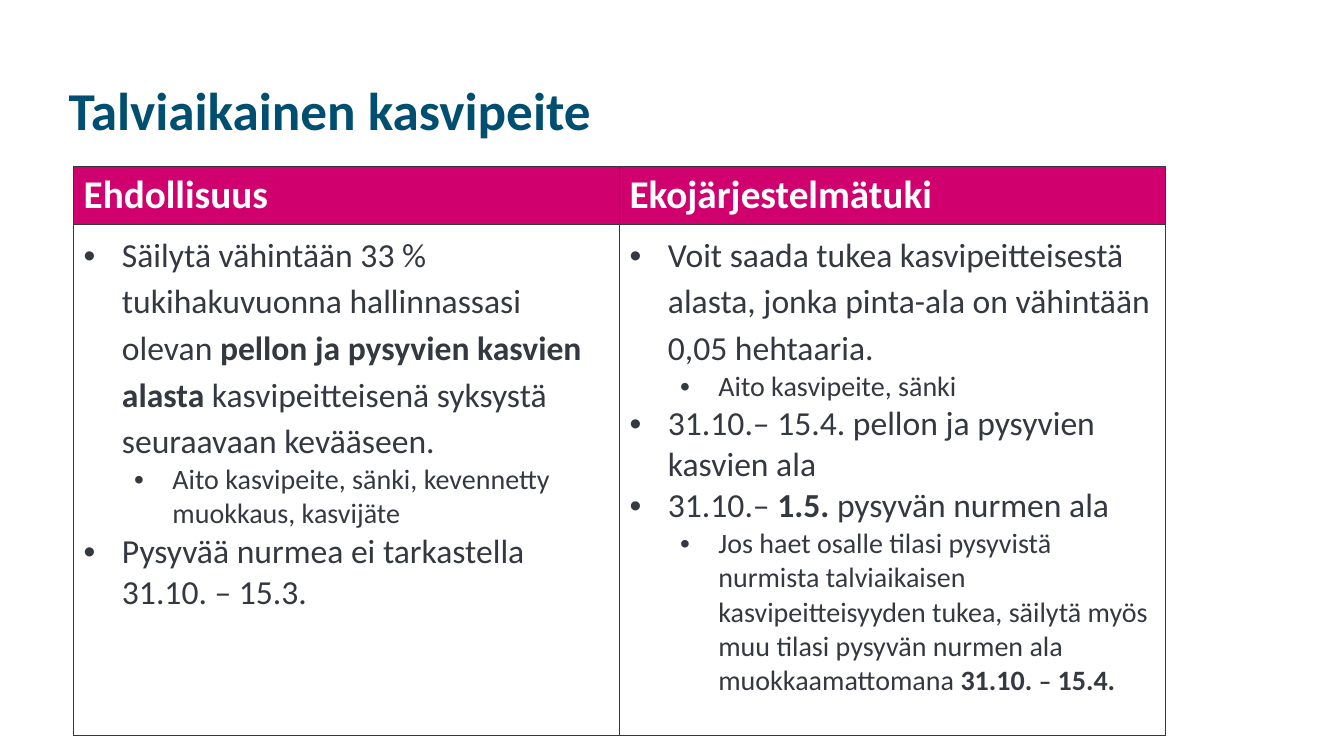
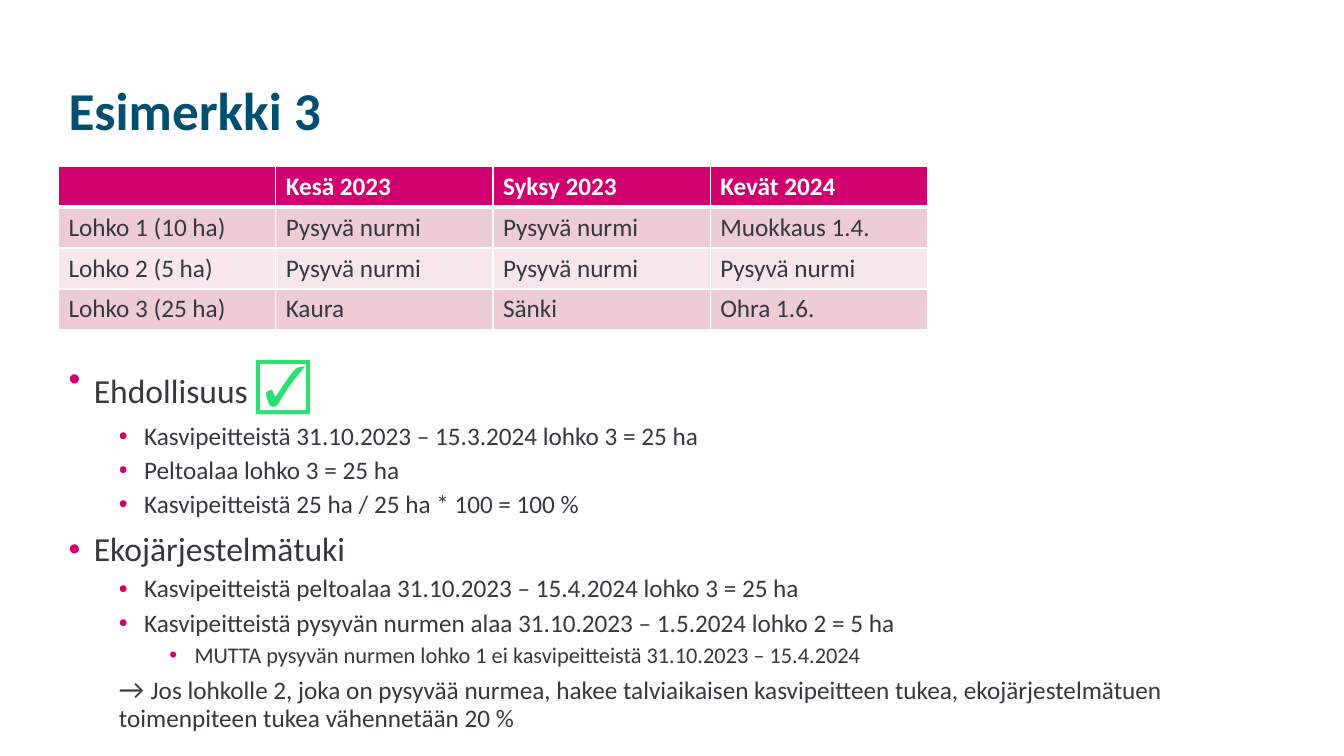
from lxml.etree import SubElement
from pptx import Presentation
from pptx.dml.color import RGBColor
from pptx.enum.text import MSO_ANCHOR, MSO_AUTO_SIZE, PP_ALIGN
from pptx.oxml.ns import qn
from pptx.util import Inches, Pt

# Shared look
COLORS = {
    "title": "004F71", "text": "343841", "accent": "D0006F", "white": "FFFFFF",
    "band_dark": "EECCD5", "band_light": "F7E7EB", "check": "2BE270",
}
FONT = "Calibri"
TITLE_BOX = (0.58, 0.4, 10.67, 1.45)
TABLE_TOP = 1.65
LEVEL_STEP = 0.5

# List styles: sizes and space before by level, hanging indent, bullet colour
CELL_LIST = {"sizes": (24, 20), "before": (0, 0), "hanging": 0.38,
             "spacing": 1.0, "bullet": "text"}
BODY_LIST = {"sizes": (24, 18, 16), "before": (10, 5, 5), "hanging": 0.25,
             "spacing": 0.9, "bullet": "accent"}

# Content: a list item is (level, runs, changes); a run is (text, changes)
BOLD = {"bold": True}
LOOSE = {"spacing": 1.14}

COVER_TITLE = "Talviaikainen kasvipeite"
COVER_HEADERS = ["Ehdollisuus", "Ekojärjestelmätuki"]
COVER_LISTS = [
    [
        (0, [("Säilytä vähintään 33 % tukihakuvuonna hallinnassasi olevan ", {}),
             ("pellon ja pysyvien kasvien alasta ", BOLD),
             ("kasvipeitteisenä syksystä seuraavaan kevääseen.", {})], LOOSE),
        (1, [("Aito kasvipeite, sänki, kevennetty muokkaus, kasvijäte", {})], {}),
        (0, [("Pysyvää nurmea ei tarkastella 31.10. – 15.3.", {})], {}),
    ],
    [
        (0, [("Voit saada tukea kasvipeitteisestä alasta, jonka pinta-ala on "
              "vähintään 0,05 hehtaaria.", {})], LOOSE),
        (1, [("Aito kasvipeite, sänki", {})], {}),
        (0, [("31.10.– 15.4. pellon ja pysyvien kasvien ala", {})], {}),
        (0, [("31.10.– ", {}), ("1.5. ", BOLD), ("pysyvän nurmen ala", {})], {}),
        (1, [("Jos haet osalle tilasi pysyvistä nurmista talviaikaisen "
              "kasvipeitteisyyden tukea, säilytä myös muu tilasi pysyvän nurmen "
              "ala muokkaamattomana ", {}),
             ("31.10. ", BOLD), ("–", {"bold": True, "size": 18}),
             (" 15.4.", BOLD)], {}),
    ],
]

EXAMPLE_TITLE = "Esimerkki 3"
EXAMPLE_ROWS = [
    ["", "Kesä 2023", "Syksy 2023", "Kevät 2024"],
    ["Lohko 1 (10 ha)", "Pysyvä nurmi", "Pysyvä nurmi", "Muokkaus 1.4."],
    ["Lohko 2 (5 ha)", "Pysyvä nurmi", "Pysyvä nurmi", "Pysyvä nurmi"],
    ["Lohko 3 (25 ha)", "Kaura", "Sänki", "Ohra 1.6."],
]
EXAMPLE_LIST = [
    (0, [("Ehdollisuus ", {}),
         ("☑", {"size": 40, "color": "check", "bold": True}),
         (" ", {"size": 44})], {}),
    (1, [("Kasvipeitteistä 31.10.2023 – 15.3.2024 lohko 3 = 25 ha", {})], {}),
    (1, [("Peltoalaa lohko 3 = 25 ha", {})], {}),
    (1, [("Kasvipeitteistä 25 ha / 25 ha * 100 = 100 %", {})], {}),
    (0, [("Ekojärjestelmätuki", {})], {}),
    (1, [("Kasvipeitteistä peltoalaa 31.10.2023 – 15.4.2024 lohko 3 = 25 ha", {})], {}),
    (1, [("Kasvipeitteistä pysyvän nurmen alaa 31.10.2023 – 1.5.2024 "
          "lohko 2 = 5 ha", {})], {}),
    (2, [("MUTTA pysyvän nurmen lohko 1 ei kasvipeitteistä "
          "31.10.2023 – 15.4.2024", {})], {}),
    (1, [("→ ", {"size": 20}),
         ("Jos lohkolle 2, joka on pysyvää nurmea, hakee talviaikaisen "
          "kasvipeitteen tukea, ekojärjestelmätuen toimenpiteen tukea "
          "vähennetään 20 %", {})], {"bullet": None, "hanging": 0}),
]


def rgb(name):
    return RGBColor.from_string(COLORS[name])


# Text
def add_run(paragraph, text, size, color="text", bold=False):
    run = paragraph.add_run()
    run.text = text
    run.font.name = FONT
    run.font.size = Pt(size)
    run.font.bold = bold
    run.font.color.rgb = rgb(color)


def set_bullet(paragraph, left, hanging, color):
    properties = paragraph._p.get_or_add_pPr()
    properties.set("marL", str(Inches(left)))
    properties.set("indent", str(-Inches(hanging)))
    if color is None:
        SubElement(properties, qn("a:buNone"))
        return
    bullet_color = SubElement(properties, qn("a:buClr"))
    SubElement(bullet_color, qn("a:srgbClr"), val=COLORS[color])
    SubElement(properties, qn("a:buFont"), typeface="Arial")
    SubElement(properties, qn("a:buChar"), char="•")


def fill_list(text_frame, items, list_style):
    for index, (level, runs, changes) in enumerate(items):
        style = {**list_style, **changes}
        paragraph = text_frame.add_paragraph() if index else text_frame.paragraphs[0]
        paragraph.level = level
        left = style["hanging"] + LEVEL_STEP * level
        set_bullet(paragraph, left, style["hanging"], style["bullet"])
        paragraph.line_spacing = style["spacing"]
        paragraph.space_before = Pt(style["before"][level] if index else 0)
        for text, run_changes in runs:
            add_run(paragraph, text, **{"size": style["sizes"][level], **run_changes})


# Slide parts
def place(shape, box):
    shape.left, shape.top, shape.width, shape.height = map(Inches, box)


def add_titled_slide(presentation, layout_index, title):
    slide = presentation.slides.add_slide(presentation.slide_layouts[layout_index])
    for placeholder in list(slide.placeholders):
        if placeholder.placeholder_format.idx >= 10:
            placeholder.element.getparent().remove(placeholder.element)
    shape = slide.shapes.title
    place(shape, TITLE_BOX)
    frame = shape.text_frame
    frame.word_wrap = True
    frame.auto_size = MSO_AUTO_SIZE.NONE
    frame.vertical_anchor = MSO_ANCHOR.MIDDLE
    paragraph = frame.paragraphs[0]
    paragraph.alignment = PP_ALIGN.LEFT
    paragraph.line_spacing = Pt(40)
    add_run(paragraph, title, 38, "title", True)
    return slide


def add_plain_table(slide, left, width, row_heights, column_count):
    frame = slide.shapes.add_table(len(row_heights), column_count, Inches(left),
                                   Inches(TABLE_TOP), Inches(width),
                                   Inches(sum(row_heights)))
    table = frame.table
    table.horz_banding = False
    for row, height in zip(table.rows, row_heights):
        row.height = Inches(height)
    return table


def style_cell(cell, fill, border, top=1, bottom=1):
    properties = cell._tc.get_or_add_tcPr()
    for side, points in (("L", 1), ("R", 1), ("T", top), ("B", bottom)):
        line = SubElement(properties, qn(f"a:ln{side}"), w=str(Pt(points)))
        solid = SubElement(line, qn("a:solidFill"))
        SubElement(solid, qn("a:srgbClr"), val=COLORS[border])
    cell.fill.solid()
    cell.fill.fore_color.rgb = rgb(fill)


def build_cover_slide(presentation):
    slide = add_titled_slide(presentation, 5, COVER_TITLE)
    table = add_plain_table(slide, 0.73, 10.83, (0.57, 5.07), len(COVER_HEADERS))
    for column, (header, items) in enumerate(zip(COVER_HEADERS, COVER_LISTS)):
        header_cell, list_cell = table.cell(0, column), table.cell(1, column)
        style_cell(header_cell, "accent", "text")
        style_cell(list_cell, "white", "text")
        add_run(header_cell.text_frame.paragraphs[0], header, 28, "white", True)
        fill_list(list_cell.text_frame, items, CELL_LIST)


def build_example_slide(presentation):
    slide = add_titled_slide(presentation, 1, EXAMPLE_TITLE)
    heights = [1.62 / len(EXAMPLE_ROWS)] * len(EXAMPLE_ROWS)
    table = add_plain_table(slide, 0.58, 8.62, heights, len(EXAMPLE_ROWS[0]))
    for row, texts in enumerate(EXAMPLE_ROWS):
        is_header = row == 0
        band = "band_dark" if row % 2 else "band_light"
        for column, text in enumerate(texts):
            cell = table.cell(row, column)
            style_cell(cell, "accent" if is_header else band, "white",
                       top=3 if row == 1 else 1, bottom=3 if is_header else 1)
            if text:
                add_run(cell.text_frame.paragraphs[0], text, 18,
                        "white" if is_header else "text", is_header)

    body = slide.placeholders[1]
    place(body, (0.58, 3.42, 11.5, 3.8))
    body.text_frame.word_wrap = True
    body.text_frame.auto_size = MSO_AUTO_SIZE.NONE
    body.text_frame.vertical_anchor = MSO_ANCHOR.TOP
    fill_list(body.text_frame, EXAMPLE_LIST, BODY_LIST)


def main():
    presentation = Presentation()
    presentation.slide_width = Inches(13.33)
    presentation.slide_height = Inches(7.5)
    build_cover_slide(presentation)
    build_example_slide(presentation)
    presentation.save("out.pptx")


if __name__ == "__main__":
    main()
